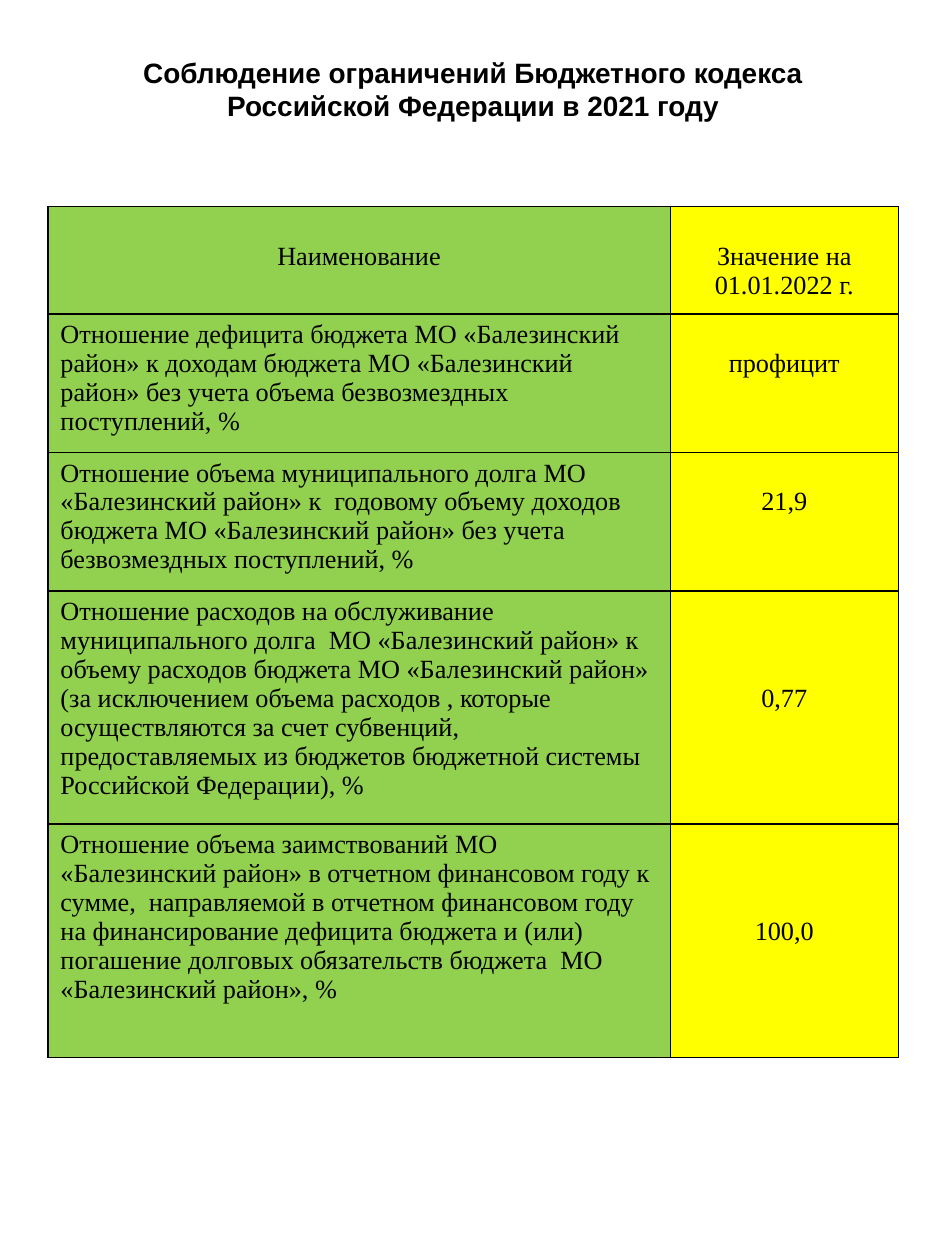
import dataclasses

import lxml.etree
import pptx
import pptx.dml.color
import pptx.enum.text
import pptx.oxml.ns
import pptx.util

Inches = pptx.util.Inches
Align = pptx.enum.text.PP_ALIGN
Anchor = pptx.enum.text.MSO_ANCHOR


@dataclasses.dataclass(frozen=True)
class Theme:
    ink: str = "000000"
    name_fill: str = "92D050"
    value_fill: str = "FFFF00"
    title_font: str = "Arial"
    table_font: str = "Times New Roman"
    title_size: int = 16
    table_size: int = 15
    border_width: int = 1


LEFT, WIDTH = 0.38, 6.75
COLUMN_WIDTHS = (4.94, 1.81)
CELL_MARGIN, LINE_HEIGHT = 0.05, 0.23

TITLE = "Соблюдение ограничений Бюджетного кодекса Российской Федерации в 2021 году"
HEADER = ("Наименование", "Значение на 01.01.2022 г.")

# Row height, indicator, value, lines by which the value is lowered
INDICATORS = [
    (1.1, "Отношение дефицита бюджета МО «Балезинский район» к доходам бюджета "
          "МО «Балезинский район» без учета объема безвозмездных поступлений, %",
     "профицит", 1),
    (1.1, "Отношение объема муниципального долга МО «Балезинский район» к  годовому "
          "объему доходов бюджета МО «Балезинский район» без учета безвозмездных "
          "поступлений, %",
     "21,9", 1),
    (1.85, "Отношение расходов на обслуживание муниципального долга  МО «Балезинский "
           "район» к объему расходов бюджета МО «Балезинский район» (за исключением "
           "объема расходов , которые осуществляются за счет субвенций, "
           "предоставляемых из бюджетов бюджетной системы Российской Федерации), %",
     "0,77", 3),
    (1.85, "Отношение объема заимствований МО «Балезинский район» в отчетном финансовом "
           "году к сумме,  направляемой в отчетном финансовом году на финансирование "
           "дефицита бюджета и (или) погашение долговых обязательств бюджета  "
           "МО «Балезинский район», %",
     "100,0", 3),
]


def set_attributes(target, values):
    for name, value in values.items():
        setattr(target, name, value)


class SlideBuilder:
    def __init__(self, slide, theme):
        self.slide = slide
        self.theme = theme

    def add_text(self, text_frame, text, alignment, font, size, bold=False):
        paragraph = text_frame.paragraphs[0]
        paragraph.alignment = alignment
        run = paragraph.add_run()
        run.text = text
        set_attributes(run.font, {"name": font, "size": pptx.util.Pt(size), "bold": bold})
        run.font.color.rgb = pptx.dml.color.RGBColor.from_string(self.theme.ink)

    def title(self, text, left, top, width, height):
        shape = self.slide.shapes.add_textbox(
            Inches(left), Inches(top), Inches(width), Inches(height))
        set_attributes(shape.text_frame, {
            "word_wrap": True,
            "vertical_anchor": Anchor.MIDDLE,
            "margin_left": Inches(0.5),
            "margin_right": Inches(0.5),
        })
        self.add_text(shape.text_frame, text, Align.CENTER,
                      self.theme.title_font, self.theme.title_size, bold=True)

    def table(self, left, top, column_widths, row_heights):
        shape = self.slide.shapes.add_table(
            len(row_heights), len(column_widths), Inches(left), Inches(top),
            Inches(sum(column_widths)), Inches(sum(row_heights)))
        table = shape.table
        set_attributes(table, {"first_row": False, "horz_banding": False})
        for column, width in zip(table.columns, column_widths):
            column.width = Inches(width)
        for row, height in zip(table.rows, row_heights):
            row.height = Inches(height)
        return table

    def cell(self, cell, text, fill, alignment, lowered_lines=0):
        set_attributes(cell, {
            "vertical_anchor": Anchor.TOP,
            "margin_top": Inches(CELL_MARGIN + lowered_lines * LINE_HEIGHT),
            "margin_bottom": Inches(CELL_MARGIN),
            "margin_left": Inches(0.1),
            "margin_right": Inches(0.1),
        })
        self.add_text(cell.text_frame, text, alignment,
                      self.theme.table_font, self.theme.table_size)
        self.borders(cell)
        cell.fill.solid()
        cell.fill.fore_color.rgb = pptx.dml.color.RGBColor.from_string(fill)

    def borders(self, cell):
        """Outline all four sides; must precede the fill in the cell's XML."""
        qualified = pptx.oxml.ns.qn
        properties = cell._tc.get_or_add_tcPr()
        width = str(pptx.util.Pt(self.theme.border_width))
        for side in ("a:lnL", "a:lnR", "a:lnT", "a:lnB"):
            line = lxml.etree.SubElement(properties, qualified(side), w=width)
            fill = lxml.etree.SubElement(line, qualified("a:solidFill"))
            lxml.etree.SubElement(fill, qualified("a:srgbClr"), val=self.theme.ink)


def main():
    presentation = pptx.Presentation()
    set_attributes(presentation, {"slide_width": Inches(7.5), "slide_height": Inches(10)})
    theme = Theme()
    builder = SlideBuilder(
        presentation.slides.add_slide(presentation.slide_layouts[6]), theme)

    builder.title(TITLE, LEFT, 0.4, WIDTH, 0.61)

    rows = [(0.85, *HEADER, 1), *INDICATORS]
    table = builder.table(LEFT, 1.64, COLUMN_WIDTHS, [row[0] for row in rows])
    for index, (_, name, value, lowered_lines) in enumerate(rows):
        is_header = index == 0
        builder.cell(table.cell(index, 0), name, theme.name_fill,
                     Align.CENTER if is_header else Align.LEFT, int(is_header))
        builder.cell(table.cell(index, 1), value, theme.value_fill,
                     Align.CENTER, lowered_lines)

    presentation.save("out.pptx")


if __name__ == "__main__":
    main()
